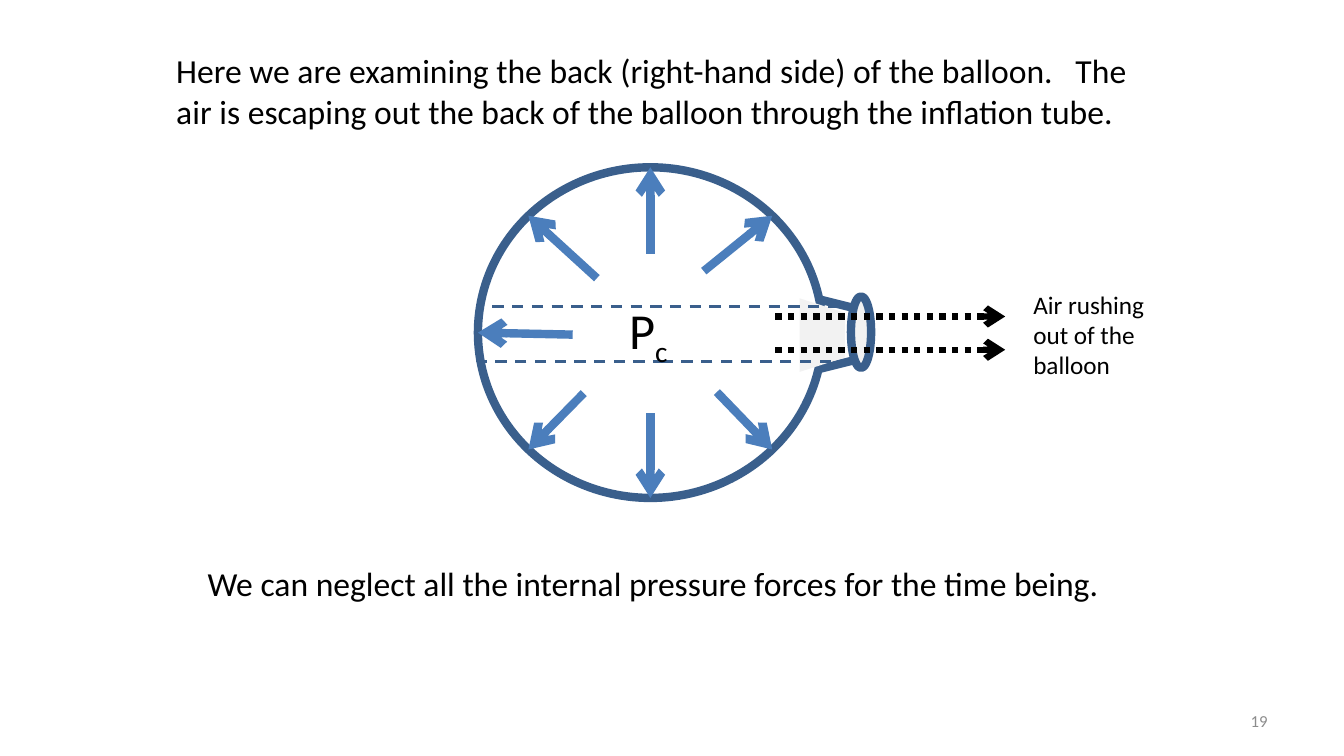
"""Build a slide showing air escaping from the back of a balloon."""
from math import cos, radians, sin
from lxml import etree
from pptx import Presentation
from pptx import util as u
from pptx.dml.color import RGBColor
from pptx.enum import dml, shapes, text
from pptx.oxml.ns import qn

FONT = "Calibri"
BLACK = RGBColor(0, 0, 0)
WHITE = RGBColor(255, 255, 255)
PALE = RGBColor(0xF2, 0xF2, 0xF2)
GREY = RGBColor(0x8C, 0x8C, 0x8C)
NAVY = RGBColor(0x3A, 0x5F, 0x8C)
BLUE = RGBColor(0x4B, 0x7E, 0xBC)

OVAL = shapes.MSO_SHAPE.OVAL
TRAPEZOID = shapes.MSO_SHAPE.TRAPEZOID
DASH = dml.MSO_LINE.DASH
DOT = dml.MSO_LINE.ROUND_DOT

CENTER_X, CENTER_Y = 6.45, 3.3
RADIUS_X, RADIUS_Y = 1.71, 1.64
BALLOON = (CENTER_X - RADIUS_X, CENTER_Y - RADIUS_Y, 2 * RADIUS_X, 2 * RADIUS_Y)

# kind, box, rotation, fill, line width, dash, adjustment
PARTS = [
    (TRAPEZOID, (7.93, 3.09, 0.72, 0.45), 90, WHITE, 6, None, 0.25),
    (OVAL, BALLOON, 0, WHITE, 6, None, None),
    (OVAL, (8.44, 2.94, 0.2, 0.71), 0, PALE, 6, None, None),
    (TRAPEZOID, (7.79, 3.1, 0.73, 0.45), 90, PALE, 0, None, 0.318),
    (shapes.MSO_SHAPE.RECTANGLE, (4.74, 3.04, 3.7, 0.55), 0, None, 2, DASH, None),
]
PRESSURE_TAILS = {
    45: (7.11, 3.89), 90: (6.45, 4.1), 135: (5.79, 3.9), 180: (5.68, 3.32),
    225: (5.92, 2.76), 270: (6.45, 2.52), 315: (6.98, 2.69),
}
JET_X, JET_ROWS = (7.69, 9.97), (3.14, 3.47)

LABELS = [
    ("Here we are examining the back (right-hand side) of the balloon.   "
     "The air is escaping out the back of the balloon through the inflation tube.",
     (1.65, 0.45, 10.04, 0.91), 24),
    ("Air rushing out of the balloon", (10.15, 2.82, 1.57, 1.01), 18),
    ("We can neglect all the internal pressure forces for the time being.",
     (1.96, 5.54, 9.42, 0.5), 24),
]
PRESSURE, PRESSURE_INDEX, PRESSURE_BOX = "P", "c", (6.14, 2.92, 0.91, 0.71)
PAGE, PAGE_BOX = "19", (9.56, 6.95, 3.11, 0.4)


def inches(values):
    return [u.Inches(v) for v in values]


def add_part(s, kind, box, rotation, fill, width, dash, adjustment):
    sp = s.shapes.add_shape(kind, *inches(box))
    sp.shadow.inherit = False
    sp.rotation = rotation
    if adjustment is not None:
        sp.adjustments[0] = adjustment
    if fill is None:
        sp.fill.background()
    else:
        sp.fill.solid()
        sp.fill.fore_color.rgb = fill
    if width:
        sp.line.color.rgb = NAVY
        sp.line.width = u.Pt(width)
        if dash:
            sp.line.dash_style = dash
    else:
        sp.line.fill.background()


def add_arrow(s, start, end, color, width, dash=None):
    cx = s.shapes.add_connector(shapes.MSO_CONNECTOR.STRAIGHT, *inches(start + end))
    cx.line.color.rgb = color
    cx.line.width = u.Pt(width)
    if dash:
        cx.line.dash_style = dash
    etree.SubElement(cx.line._get_or_add_ln(), qn("a:tailEnd"), type="arrow")
    etree.SubElement(cx._element.spPr, qn("a:effectLst"))


def add_label(s, words, box, size, color=BLACK):
    tf = s.shapes.add_textbox(*inches(box)).text_frame
    tf.word_wrap = True
    p = tf.paragraphs[0]
    p.add_run().text = words
    p.font.name, p.font.size = FONT, u.Pt(size)
    p.font.color.rgb = color
    return tf


def main():
    prs = Presentation()
    prs.slide_width, prs.slide_height = inches((13.33, 7.5))
    s = prs.slides.add_slide(prs.slide_layouts[6])

    for part in PARTS:
        add_part(s, *part)
    for label in LABELS:
        add_label(s, *label)

    p = add_label(s, PRESSURE, PRESSURE_BOX, 36).paragraphs[0]
    r = p.add_run()
    r.text = PRESSURE_INDEX
    r.font._element.set("baseline", "-25000")

    for angle, tail in PRESSURE_TAILS.items():
        a = radians(angle)
        tip = (CENTER_X + RADIUS_X * cos(a), CENTER_Y + RADIUS_Y * sin(a))
        add_arrow(s, tail, tip, BLUE, 6)
    for y in JET_ROWS:
        add_arrow(s, (JET_X[0], y), (JET_X[1], y), BLACK, 4.5, DOT)

    tf = add_label(s, PAGE, PAGE_BOX, 12, GREY)
    tf.vertical_anchor = text.MSO_ANCHOR.MIDDLE
    tf.paragraphs[0].alignment = text.PP_ALIGN.RIGHT
    prs.save("out.pptx")


if __name__ == "__main__":
    main()
